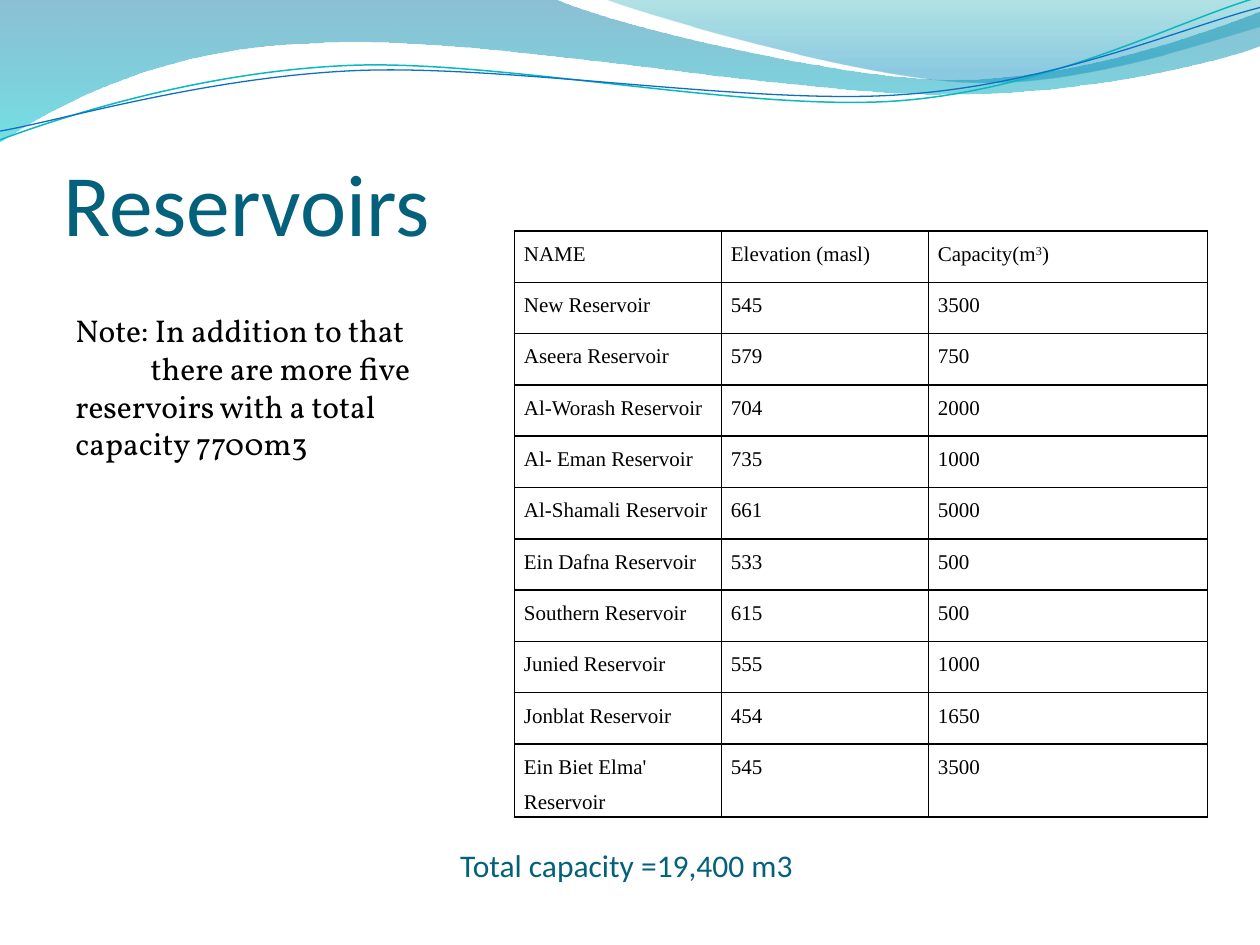
from math import cos, radians, sin
from lxml.etree import SubElement
from pptx import Presentation
from pptx.dml.color import RGBColor
from pptx.enum.text import MSO_ANCHOR, MSO_AUTO_SIZE, PP_ALIGN
from pptx.oxml import parse_xml
from pptx.oxml.ns import nsdecls, qn
from pptx.util import Pt

BLACK = RGBColor(0x00, 0x00, 0x00)
TITLE_BLUE = RGBColor(0x04, 0x61, 0x7B)
DEEP_BLUE = RGBColor(0x00, 0x74, 0xA1)
CYAN = RGBColor(0x00, 0xC6, 0xCF)
TEAL = RGBColor(0x00, 0xA1, 0xA9)
SKY = RGBColor(0x00, 0x8B, 0xBF)
LINE_TEAL = RGBColor(0x0A, 0xB8, 0xBF)
LINE_BLUE = RGBColor(0x0F, 0x6F, 0xC6)
TILT = 2.7


def add_wave(start, segments, close):
    points = [start] + [pair for seg in segments for pair in zip(seg[::2], seg[1::2])]
    if not close:
        cx, cy, c, d = 359.3, 41.8, cos(radians(TILT)), sin(radians(TILT))
        points = [(cx + (x - cx) * c - (y - cy) * d, cy + (x - cx) * d + (y - cy) * c)
                  for x, y in points]
    points = [(Pt(x), Pt(y)) for x, y in points]
    builder = s.shapes.build_freeform(*points[0])
    builder.add_line_segments(points[1:], close=close)
    sp = builder.convert_to_shape()
    lines = iter(list(sp._element.iter(qn("a:lnTo"))))
    for seg in segments:
        first = next(lines)
        if len(seg) == 6:
            first.tag = qn("a:cubicBezTo")
            for _ in range(2):
                line = next(lines)
                first.append(line[0])
                line.getparent().remove(line)
    sp.shadow.inherit = False
    return sp


def add_run(p, text, font, size, color):
    r = p.add_run()
    r.text = text
    r.font.name = font
    r.font.size = Pt(size)
    r.font.color.rgb = color
    return r


prs = Presentation()
prs.slide_width, prs.slide_height = Pt(720), Pt(540)
s = prs.slides.add_slide(prs.slide_layouts[5])

bands = [
    ((0, 0),
     [(316.8, -0.7), (342.7, 12.2, 478.1, 45.4, 545.8, 45.4),
      (614.2, 45.4, 689.8, 18.7, 720, 6.5), (720.7, 25.9),
      (707.8, 31.7, 626.4, 54.7, 537.1, 54), (447.8, 54, 275, 20.2, 185, 24.5),
      (92.9, 25.9, 33.1, 59.8, -0.7, 81.4), (0, 0)],
     [(0, DEEP_BLUE, 45), (1, CYAN, 55)]),
    ((344.9, -0.7),
     [(366.5, 7.9, 491, 44.6, 553.7, 46.8),
      (616.3, 49.7, 691.9, 23, 720, 15.1), (720, 0), (344.9, -0.7)],
     [(0, TEAL, 30), (0.8, SKY, 45)]),
]
for start, segments, stops in bands:
    sp = add_wave(start, segments, True)
    sp.line.fill.background()
    sp.fill.gradient()
    sp.fill.gradient_angle = 270
    for stop, (position, color, _) in zip(sp.fill.gradient_stops, stops):
        stop.position = position
        stop.color.rgb = color
    for clr, (_, _, opacity) in zip(sp._element.spPr.iter(qn("a:srgbClr")), stops):
        SubElement(clr, qn("a:alpha")).set("val", str(opacity * 1000))

curves = [
    ((0, 79.9),
     [(34.6, 67, 113.8, 41, 199.4, 37.4), (284.4, 33.8, 427, 64.1, 513.4, 57.6),
      (599.8, 51.1, 675.4, 10.8, 718.6, -1.4)], LINE_TEAL, 0.85),
    ((0, 74.9),
     [(33.8, 69.1, 118.1, 43.9, 203.8, 40.3), (290.2, 36.7, 433.4, 60.5, 516.2, 54),
      (601.9, 48.2, 677.5, 15.1, 720, 4.3)], LINE_BLUE, 0.75),
]
for start, segments, color, width in curves:
    sp = add_wave(start, segments, False)
    sp.rotation = -TILT
    sp.fill.background()
    sp.line.color.rgb = color
    sp.line.width = Pt(width)

title = s.shapes.title
title.left, title.top, title.width, title.height = Pt(36), Pt(55.4), Pt(648), Pt(90)
tf = title.text_frame
tf.auto_size = MSO_AUTO_SIZE.NONE
tf.vertical_anchor = MSO_ANCHOR.BOTTOM
tf.margin_left = tf.margin_right = tf.margin_bottom = 0
tf.margin_top = Pt(3.6)
p = tf.paragraphs[0]
p.alignment = PP_ALIGN.LEFT
add_run(p, "Reservoirs", "Calibri", 50, TITLE_BLUE)

rows = [
    ("NAME", "Elevation (masl)", "Capacity(m"),
    ("New Reservoir", "545", "3500"),
    ("Aseera Reservoir", "579", "750"),
    ("Al-Worash Reservoir", "704", "2000"),
    ("Al- Eman Reservoir", "735", "1000"),
    ("Al-Shamali Reservoir", "661", "5000"),
    ("Ein Dafna Reservoir", "533", "500"),
    ("Southern Reservoir", "615", "500"),
    ("Junied Reservoir", "555", "1000"),
    ("Jonblat Reservoir", "454", "1650"),
    ("Ein Biet Elma' Reservoir", "545", "3500"),
]
table = s.shapes.add_table(len(rows), 3, Pt(294), Pt(132), Pt(396), Pt(335)).table
table.first_row = table.horz_banding = False
for col, width in zip(table.columns, (118.3, 118.3, 159.4)):
    col.width = Pt(width)
for i, values in enumerate(rows):
    table.rows[i].height = Pt(41.8 if i == len(rows) - 1 else 29.32)
    for j, value in enumerate(values):
        cell = table.cell(i, j)
        cell.margin_left = cell.margin_right = Pt(5.4)
        cell.margin_top = cell.margin_bottom = 0
        cell.fill.background()
        for k, side in enumerate(("lnL", "lnR", "lnT", "lnB")):
            cell._tc.get_or_add_tcPr().insert(k, parse_xml(
                f'<a:{side} {nsdecls("a")} w="{Pt(1)}"><a:solidFill>'
                f'<a:srgbClr val="{BLACK}"/></a:solidFill></a:{side}>'))
        p = cell.text_frame.paragraphs[0]
        p.line_spacing = 1.5
        add_run(p, value, "Times New Roman", 12, BLACK)

p = table.cell(0, 2).text_frame.paragraphs[0]
r = add_run(p, "3", "Times New Roman", 12, BLACK)
r.font._element.set("baseline", "30000")
add_run(p, ")", "Times New Roman", 12, BLACK)

tf = s.shapes.add_textbox(Pt(60), Pt(480), Pt(604), Pt(29)).text_frame
tf.word_wrap = True
tf.auto_size = MSO_AUTO_SIZE.SHAPE_TO_FIT_TEXT
tf.margin_right = Pt(15)
p = tf.paragraphs[0]
p.alignment = PP_ALIGN.CENTER
add_run(p, "Total capacity =19,400 m3", "Calibri", 18, TITLE_BLUE)

tf = s.shapes.add_textbox(Pt(36), Pt(174.2), Pt(216), Pt(94.3)).text_frame
tf.word_wrap = True
tf.auto_size = MSO_AUTO_SIZE.SHAPE_TO_FIT_TEXT
p = tf.paragraphs[0]
tabs = SubElement(p._p.get_or_add_pPr(), qn("a:tabLst"))
SubElement(tabs, qn("a:tab"), pos=str(Pt(43)), algn="l")
add_run(p, "Note: In addition to that", "Vollkorn", 18, BLACK)
p.add_line_break()
add_run(p, "\tthere are more five reservoirs with a total capacity 7700m3", "Vollkorn", 18, BLACK)

prs.save("out.pptx")
